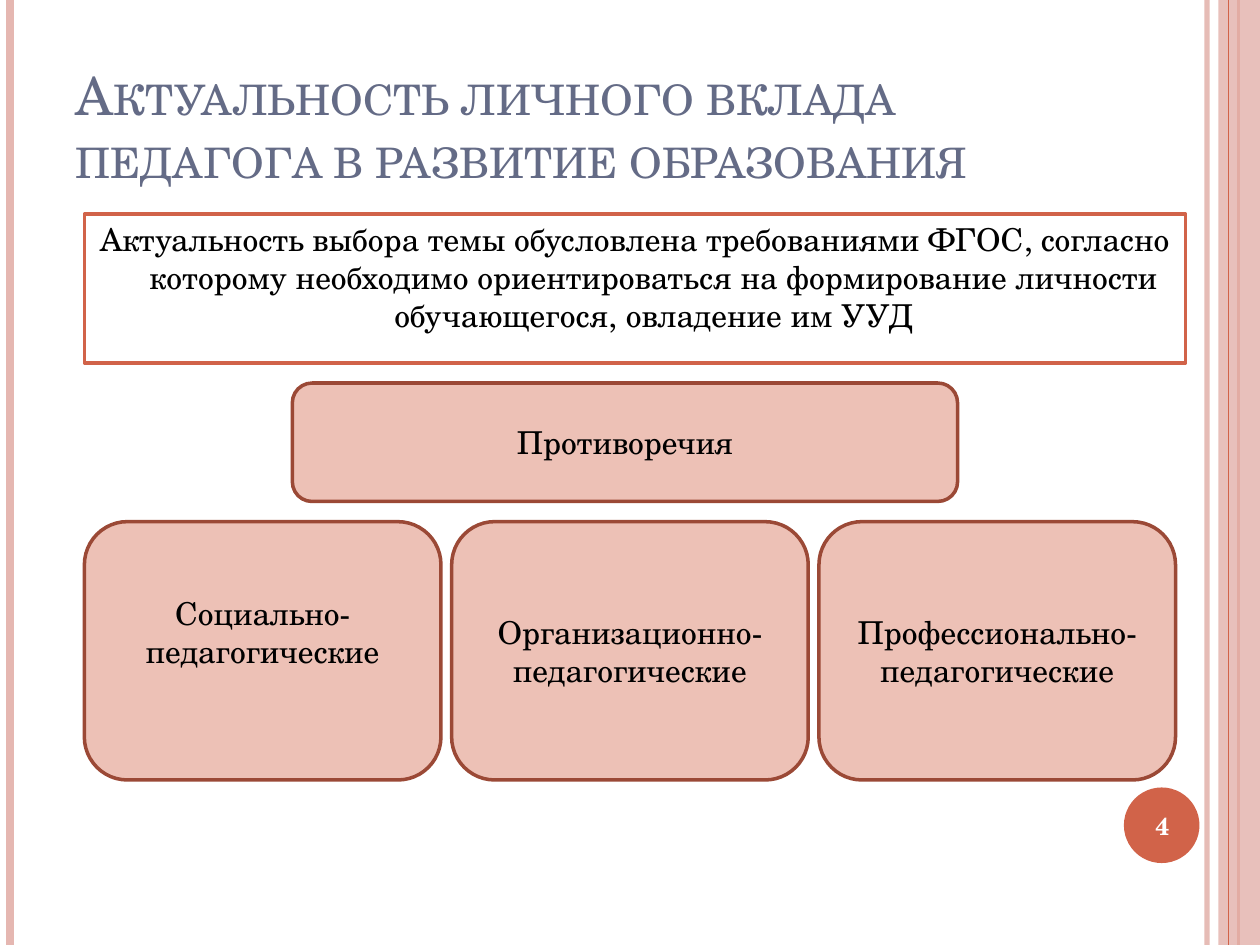
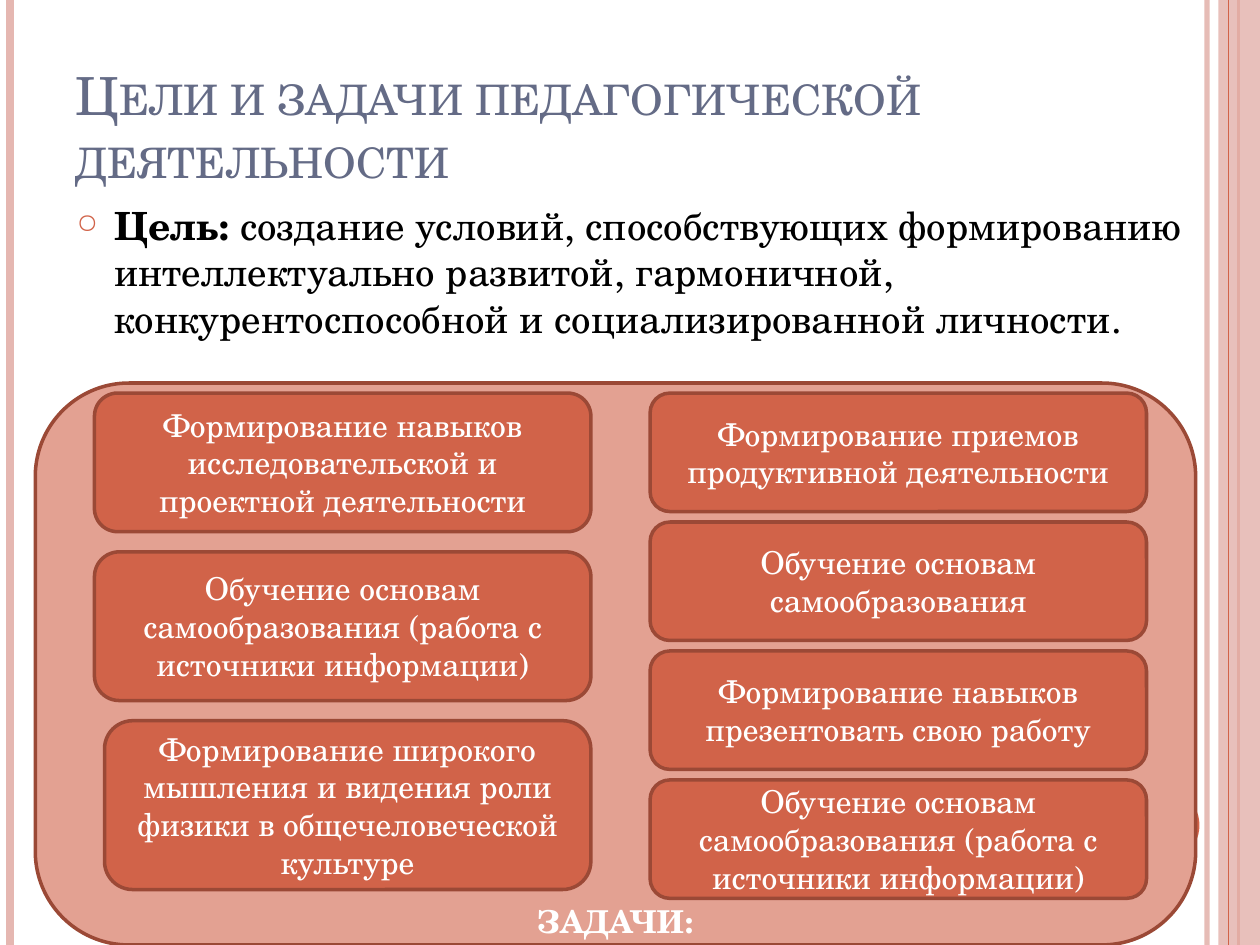
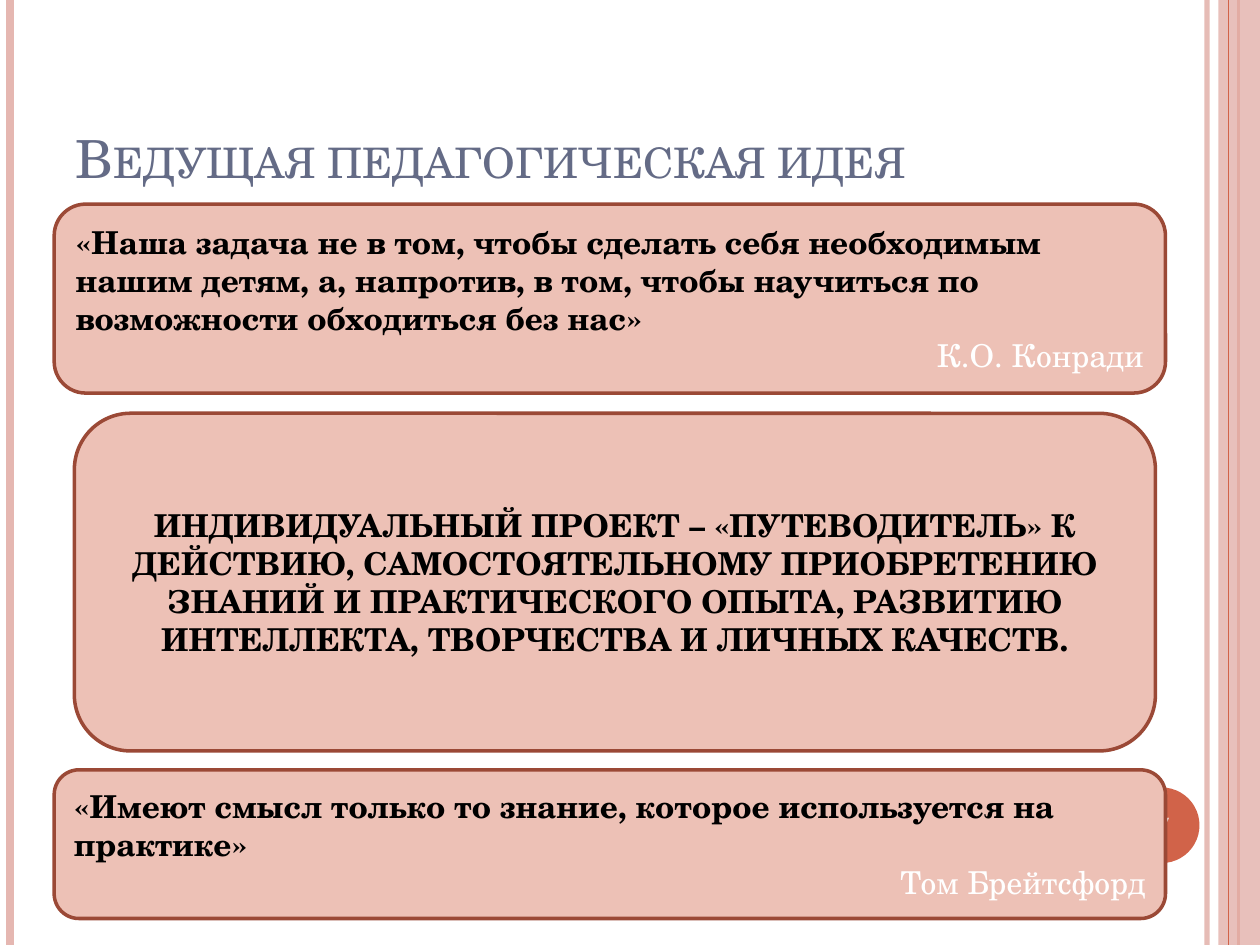
from lxml import etree
from pptx import Presentation
from pptx import util as u
from pptx.dml.color import RGBColor
from pptx.enum import shapes, text
from pptx.oxml.ns import qn

COLORS = {
    "accent": "D16349", "band": "E5B7B1", "border": "9B4936", "card": "EDC1B6",
    "panel": "E3A192", "title": "646B86", "dark": "000000", "light": "FFFFFF",
}
FONT = "TeX Gyre Schola"
BODY_SIZE = 18
HANGING = 0.3
ALIGN = text.PP_ALIGN
ANCHOR = text.MSO_ANCHOR
SHAPE = shapes.MSO_SHAPE


def color(name):
    """Return a palette colour."""
    return RGBColor.from_string(COLORS[name])


def set_opacity(element, percent):
    """Make the colours inside an element partly transparent."""
    for node in element.iter(qn("a:srgbClr")):
        etree.SubElement(node, qn("a:alpha")).set("val", str(percent * 1000))


class Deck:
    """Hold the shared style and the current slide."""

    def __init__(self):
        """Start an empty presentation."""
        self.presentation = Presentation()
        self.presentation.slide_width = u.Inches(10)
        self.presentation.slide_height = u.Inches(7.5)
        self.slide = None

    def add_slide(self, title, number=None):
        """Add a slide with its bands, number badge and title."""
        layout = self.presentation.slide_layouts.get_by_name("Title Only")
        self.slide = self.presentation.slides.add_slide(layout)
        self.band_line(9.58, "band", 3, opacity=93)
        self.band_line(0.08, "band", 4.5)
        self.band_line(9.83, "accent", 1.5)
        side_band = self.shape(SHAPE.RECTANGLE, (9.67, 0, 0.33, 7.5), "band")
        set_opacity(side_band._element.spPr, 87)
        self.band_line(9.75, "accent", 0.75)
        self.shape(SHAPE.OVAL, (8.92, 6.25, 0.6, 0.6), "accent")
        if number:
            self.text_box((8.89, 6.27, 0.67, 0.57), number, ALIGN.CENTER,
                          ink="light", size=14, bold=True)
        self.title(title)

    def title(self, words):
        """Place and format the title placeholder."""
        shape = self.slide.shapes.title
        self.place(shape, (0.5, 0.3, 8.17, 1.25))
        self.frame(shape, ANCHOR.BOTTOM)
        paragraph = self.add_text(shape, words, ALIGN.LEFT, "title", 30)
        paragraph.runs[0]._r.get_or_add_rPr().set("cap", "small")

    def place(self, shape, box):
        """Set the position and size of a shape."""
        shape.left, shape.top, shape.width, shape.height = map(u.Inches, box)

    def frame(self, shape, anchor):
        """Set wrapping and vertical anchoring."""
        frame = shape.text_frame
        frame.word_wrap = True
        frame.auto_size = text.MSO_AUTO_SIZE.NONE
        frame.vertical_anchor = anchor

    def add_text(self, shape, words, align=ALIGN.CENTER, ink="dark",
                 size=BODY_SIZE, bold=False):
        """Add a paragraph, using the first one while it is empty."""
        frame = shape.text_frame
        paragraph = frame.add_paragraph() if frame.text else frame.paragraphs[0]
        paragraph.add_run().text = words
        paragraph.alignment = align
        font = paragraph.font
        font.name, font.size, font.bold = FONT, u.Pt(size), bold
        font.color.rgb = color(ink)
        return paragraph

    def hang(self, paragraph):
        """Give a paragraph the body's hanging indent and spacing."""
        paragraph.space_before = u.Pt(6)
        properties = paragraph._p.get_or_add_pPr()
        properties.set("marL", str(u.Inches(HANGING)))
        properties.set("indent", str(-u.Inches(HANGING)))
        return properties

    def bullet(self, paragraph):
        """Add the ring bullet to a hanging paragraph."""
        defaults = self.hang(paragraph).find(qn("a:defRPr"))
        bullet_color = etree.Element(qn("a:buClr"))
        etree.SubElement(bullet_color, qn("a:srgbClr")).set("val", COLORS["accent"])
        bullet_size = etree.Element(qn("a:buSzPct"), val="70000")
        character = etree.Element(qn("a:buChar"), char="○")
        for node in (bullet_color, bullet_size, character):
            defaults.addprevious(node)

    def band_line(self, x, ink, width, opacity=None):
        """Draw a full-height vertical line."""
        line = self.slide.shapes.add_connector(
            shapes.MSO_CONNECTOR.STRAIGHT,
            u.Inches(x), 0, u.Inches(x), self.presentation.slide_height)
        line.line.color.rgb = color(ink)
        line.line.width = u.Pt(width)
        properties = line._element.spPr
        if opacity:
            set_opacity(properties, opacity)
        etree.SubElement(properties, qn("a:effectLst"))

    def shape(self, kind, box, fill, border=None):
        """Draw a filled preset shape."""
        shape = self.slide.shapes.add_shape(kind, *map(u.Inches, box))
        shape.shadow.inherit = False
        shape.fill.solid()
        shape.fill.fore_color.rgb = color(fill)
        if border:
            shape.line.color.rgb = color(border)
            shape.line.width = u.Pt(2)
        else:
            shape.line.fill.background()
        return shape

    def card(self, box, words="", fill="card", ink="dark", align=ALIGN.CENTER,
             bold=False):
        """Draw a rounded card with text."""
        card = self.shape(SHAPE.ROUNDED_RECTANGLE, box, fill, "border")
        self.frame(card, ANCHOR.MIDDLE)
        if words:
            self.add_text(card, words, align, ink, bold=bold)
        return card

    def quote(self, box, words, author):
        """Draw a card with a quotation and its author."""
        card = self.card(box, words, align=ALIGN.LEFT, bold=True)
        self.add_text(card, author, ALIGN.RIGHT, "light")

    def text_box(self, box, words, align, anchor=ANCHOR.MIDDLE, **style):
        """Add a text box and return its paragraph."""
        shape = self.slide.shapes.add_textbox(*map(u.Inches, box))
        self.frame(shape, anchor)
        return self.add_text(shape, words, align, **style)


def relevance_slide(deck):
    """Build the slide on relevance and contradictions."""
    deck.add_slide("Актуальность личного вклада педагога в развитие образования", "4")
    reason = deck.shape(SHAPE.RECTANGLE, (0.67, 1.7, 8.74, 1.18), "light", "accent")
    deck.frame(reason, ANCHOR.TOP)
    deck.hang(deck.add_text(
        reason,
        "Актуальность выбора темы обусловлена требованиями ФГОС, согласно которому "
        "необходимо ориентироваться на формирование личности обучающегося, "
        "овладение им УУД"))
    deck.card((2.32, 3.04, 5.28, 0.94), "Противоречия")
    kinds = ("Социально", "Организационно", "Профессионально")
    cards = [deck.card((0.67 + 2.915 * index, 4.14, 2.83, 2.05), f"{kind}-педагогические")
             for index, kind in enumerate(kinds)]
    cards[0].text_frame.margin_bottom = u.Inches(0.35)


def goals_slide(deck):
    """Build the slide on the goal and the tasks."""
    deck.add_slide("Цели и задачи педагогической деятельности")
    goal = deck.text_box((0.51, 1.55, 9.13, 1.34), "Цель: ", ALIGN.LEFT,
                         ANCHOR.TOP, size=22.2)
    goal.runs[0].font.bold = True
    goal.add_run().text = (
        "создание условий, способствующих формированию интеллектуально развитой, "
        "гармоничной, конкурентоспособной и социализированной личности.")
    deck.bullet(goal)

    deck.card((0.28, 3.04, 9.21, 4.46), fill="panel")
    deck.text_box((3.88, 7.11, 2, 0.4), "ЗАДАЧИ:", ALIGN.CENTER, ink="light", bold=True)
    sources = "Обучение основам самообразования (работа с источники информации)"
    left_tasks = (
        (0.75, 1.1, "Формирование навыков исследовательской и проектной деятельности"),
        (0.75, 1.18, sources),
        (0.83, 1.34, "Формирование широкого мышления и видения роли физики в "
                     "общечеловеческой культуре"),
    )
    right_tasks = (
        "Формирование приемов продуктивной деятельности",
        "Обучение основам самообразования",
        "Формирование навыков презентовать свою работу",
        sources,
    )
    first_top = 3.12
    top = first_top
    for left, height, task in left_tasks:
        deck.card((left, top, 4.69 - left, height), task, "accent", "light")
        top += height + 0.16
    step = (6.19 - first_top) / (len(right_tasks) - 1)
    for index, task in enumerate(right_tasks):
        deck.card((5.16, first_top + step * index, 3.94, 0.94), task, "accent", "light")


def idea_slide(deck):
    """Build the slide on the leading idea."""
    deck.add_slide("Ведущая педагогическая идея", "7")
    deck.quote((0.43, 1.62, 8.82, 1.5),
               "«Наша задача не в том, чтобы сделать себя необходимым нашим детям, "
               "а, напротив, в том, чтобы научиться по возможности обходиться без нас»",
               "К.О. Конради")
    deck.quote((0.43, 6.11, 8.82, 1.18),
               "«Имеют смысл только то знание, которое используется на практике»",
               "Том Брейтсфорд")
    deck.card((0.59, 3.28, 8.58, 2.68),
              "ИНДИВИДУАЛЬНЫЙ ПРОЕКТ – «ПУТЕВОДИТЕЛЬ» К ДЕЙСТВИЮ, САМОСТОЯТЕЛЬНОМУ "
              "ПРИОБРЕТЕНИЮ ЗНАНИЙ И ПРАКТИЧЕСКОГО ОПЫТА, РАЗВИТИЮ ИНТЕЛЛЕКТА, "
              "ТВОРЧЕСТВА И ЛИЧНЫХ КАЧЕСТВ.", bold=True)


def main():
    """Build and save the presentation."""
    deck = Deck()
    relevance_slide(deck)
    goals_slide(deck)
    idea_slide(deck)
    deck.presentation.save("out.pptx")


if __name__ == "__main__":
    main()
